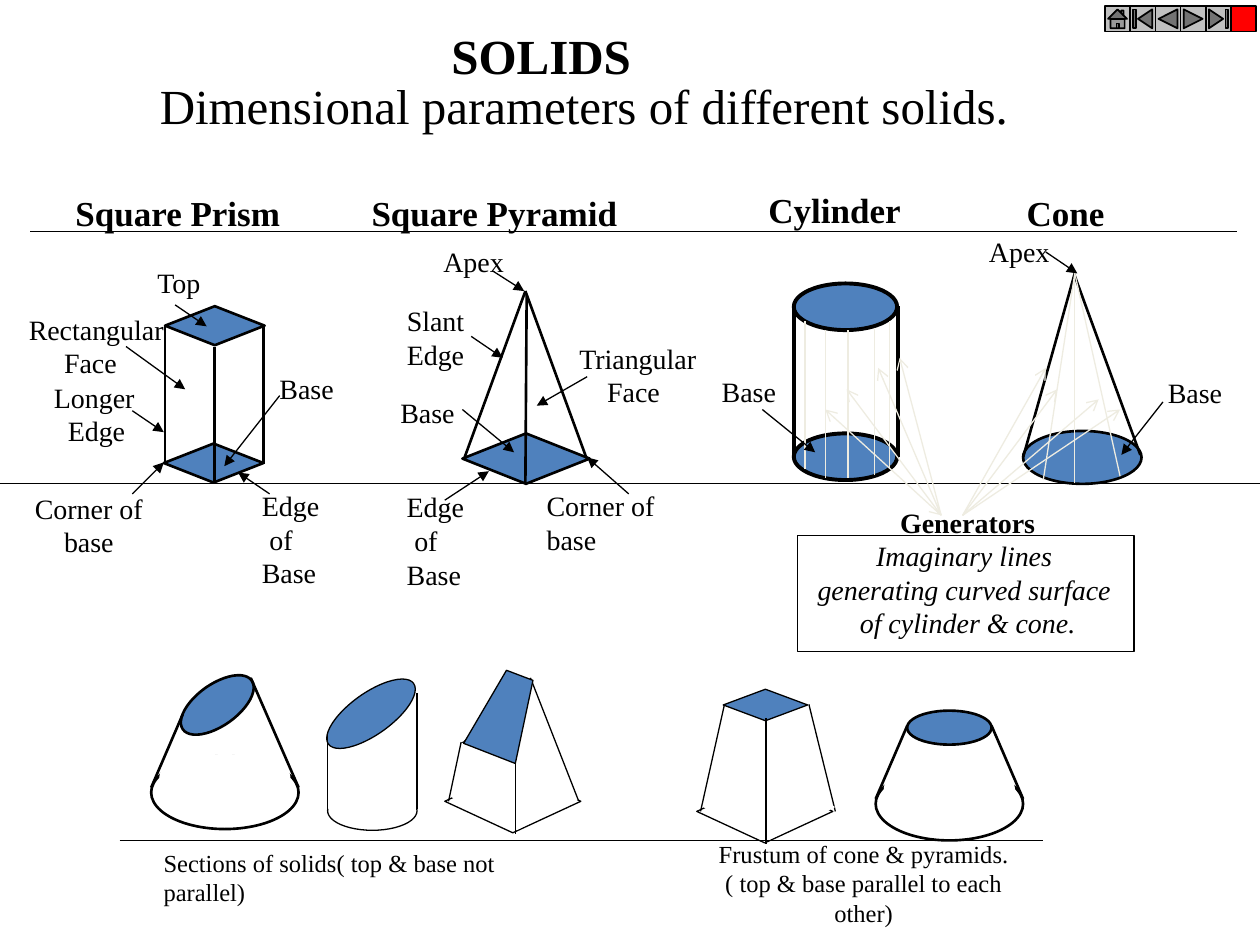
"""Build a slide on the dimensional parameters of solids."""
from dataclasses import dataclass
from typing import Optional

from lxml.etree import SubElement
from pptx import Presentation
from pptx.dml.color import RGBColor
from pptx.enum.shapes import MSO_CONNECTOR, MSO_SHAPE
from pptx.enum.text import MSO_ANCHOR, MSO_AUTO_SIZE, PP_ALIGN
from pptx.oxml.ns import qn
from pptx.util import Inches, Pt

COLORS = {"ink": "000000", "paper": "FFFFFF", "blue": "4F81BD",
          "ivory": "EEECE1", "grey": "C0C0C0", "red": "FF0000"}
FONT = "Times New Roman"
OVAL, DIAMOND, RECT = MSO_SHAPE.OVAL, MSO_SHAPE.DIAMOND, MSO_SHAPE.RECTANGLE


@dataclass
class Face:
    kind: MSO_SHAPE
    left: float
    top: float
    width: float
    height: float
    fill: str = "blue"
    edge: str = "ink"
    weight: float = 0.75
    rotation: float = 0


@dataclass
class Stroke:
    x1: float
    y1: float
    x2: float
    y2: float
    weight: float = 0.75
    color: str = "ink"
    head: Optional[str] = None
    tail: Optional[str] = None


@dataclass
class Polygon:
    points: list
    fill: str = "blue"
    edge: str = "ink"
    weight: float = 0.75


@dataclass
class Label:
    left: float
    top: float
    width: float
    height: float
    lines: list
    size: float = 16
    bold: bool = False
    indent: float = 0
    wrap: bool = False
    align: PP_ALIGN = PP_ALIGN.LEFT


def rgb(name: str) -> RGBColor:
    return RGBColor.from_string(COLORS[name])


def paint(shape, item) -> None:
    shape.shadow.inherit = False
    shape.fill.solid()
    shape.fill.fore_color.rgb = rgb(item.fill)
    shape.line.color.rgb = rgb(item.edge)
    shape.line.width = Pt(item.weight)


def draw_face(shapes, face: Face) -> None:
    shape = shapes.add_shape(face.kind, Inches(face.left), Inches(face.top),
                             Inches(face.width), Inches(face.height))
    shape.rotation = face.rotation
    paint(shape, face)


def draw_stroke(shapes, stroke: Stroke) -> None:
    line = shapes.add_connector(MSO_CONNECTOR.STRAIGHT, Inches(stroke.x1), Inches(stroke.y1),
                                Inches(stroke.x2), Inches(stroke.y2))
    line.line.color.rgb = rgb(stroke.color)
    line.line.width = Pt(stroke.weight)
    properties = line._element.spPr
    for tag, arrow in (("a:headEnd", stroke.head), ("a:tailEnd", stroke.tail)):
        if arrow:
            SubElement(properties.find(qn("a:ln")), qn(tag)).set("type", arrow)
    SubElement(properties, qn("a:effectLst"))


def draw_polygon(shapes, polygon: Polygon) -> None:
    corners = [(Inches(x), Inches(y)) for x, y in polygon.points]
    builder = shapes.build_freeform(*corners[0])
    builder.add_line_segments(corners[1:], close=True)
    paint(builder.convert_to_shape(), polygon)


DRAWERS = {Face: draw_face, Stroke: draw_stroke, Polygon: draw_polygon}


def draw(shapes, items: list) -> None:
    for item in items:
        DRAWERS[type(item)](shapes, item)


def set_font(paragraph, size: float, bold: bool = False, italic: bool = False) -> None:
    font = paragraph.font
    font.name, font.size, font.bold, font.italic = FONT, Pt(size), bold, italic
    font.color.rgb = rgb("ink")


def draw_label(shapes, label: Label):
    box = shapes.add_textbox(Inches(label.left), Inches(label.top),
                             Inches(label.width), Inches(label.height))
    frame = box.text_frame
    frame.word_wrap = label.wrap
    frame.auto_size = MSO_AUTO_SIZE.SHAPE_TO_FIT_TEXT
    for index, line in enumerate(label.lines):
        paragraph = frame.add_paragraph() if index else frame.paragraphs[0]
        paragraph.text = line
        paragraph.alignment = label.align
        set_font(paragraph, label.size, label.bold)
        if index == 1 and label.indent:
            paragraph._p.get_or_add_pPr().set("marL", str(Inches(label.indent)))
    return box


def cone_section(left: float, top: float, cap: Face, rim: list) -> list:
    low = top + 0.25
    return [Face(OVAL, left, top, 1.17, 0.58, "paper", weight=1.5), cap,
            Stroke(*rim[0], left, low, 1.5), Stroke(*rim[1], left + 1.17, low, 1.5),
            Face(OVAL, left + 0.07, top - 0.01, 1.03, 0.35, "paper", "paper")]


def pyramid_section(left: float, top: float, before: list, after: list) -> list:
    return [Face(DIAMOND, left, top, 1.08, 0.5, "paper"), *before,
            Face(DIAMOND, left + 0.06, top - 0.04, 1.03, 0.51, "paper", "paper"), *after]


CYLINDER = [Face(OVAL, 6.3, 2.25, 0.82, 0.37, weight=2.25),
            *[Stroke(x, 2.43, x, 3.63, 2.25) for x in (6.3, 7.13)],
            Face(OVAL, 6.3, 3.44, 0.82, 0.37, weight=2.25)]
CONE = [Face(OVAL, 8.12, 3.42, 0.94, 0.42, weight=1.5),
        Stroke(8.53, 2.17, 8.12, 3.63, 1.5), Stroke(8.53, 2.19, 9.05, 3.61, 1.5)]
PYRAMID = [*[Stroke(4.17, 2.31, x, 3.65, 1.5) for x in (3.68, 4.66)],
           Face(DIAMOND, 3.67, 3.44, 1.01, 0.4, weight=1.5),
           Stroke(4.18, 2.34, 4.17, 3.84, 1.5)]
PRISM = [Face(DIAMOND, 1.31, 2.43, 0.79, 0.31, weight=1.5),
         *[Stroke(x, 2.58, x, 3.68, 1.5) for x in (1.31, 2.09)],
         Face(DIAMOND, 1.3, 3.52, 0.79, 0.31, weight=1.5),
         Stroke(1.7, 3.83, 1.7, 2.75, 1.5)]
GENERATORS = [*[Stroke(x, y, x, y + 1.17, color="ivory") for x, y in
                ((6.39, 2.55), (6.55, 2.62), (6.73, 2.62), (6.94, 2.6), (7.06, 2.55))],
              *[Stroke(8.53, 2.17, x, y, color="ivory") for x, y in
                ((8.28, 3.81), (8.89, 3.78), (8.53, 3.84))]]
CONE_FRUSTUM = cone_section(6.95, 6.09, Face(OVAL, 7.2, 5.64, 0.67, 0.27, weight=1.5),
                            [(7.2, 5.76), (7.87, 5.76)])
CUT_CONE = cone_section(1.2, 6, Face(OVAL, 1.39, 5.43, 0.67, 0.33, weight=1.5, rotation=324.6),
                        [(1.45, 5.67), (1.99, 5.38)])
PYRAMID_FRUSTUM = pyramid_section(
    5.53, 6.19, [Face(DIAMOND, 5.74, 5.47, 0.67, 0.25),
                 Stroke(5.75, 5.59, 5.56, 6.44), Stroke(6.42, 5.59, 6.63, 6.44)],
    [Stroke(6.08, 5.7, 6.08, 6.7)])
CUT_PYRAMID = pyramid_section(
    3.53, 6.11, [Stroke(3.66, 5.89, 3.56, 6.36)],
    [Stroke(4.09, 6.05, 4.09, 6.62), Stroke(3.67, 5.89, 4.09, 6.05),
     Stroke(3.68, 5.89, 4.2, 5.39), Stroke(4.21, 5.38, 4.59, 6.35),
     Polygon([(4.09, 6.06), (4.23, 5.4), (4.02, 5.32), (3.68, 5.9)])])
CUT_CYLINDER = [Face(OVAL, 2.6, 6.28, 0.71, 0.31, "paper"),
                Face(OVAL, 2.53, 5.5, 0.83, 0.33, rotation=324.6),
                Stroke(2.6, 5.83, 2.6, 6.42),
                Face(RECT, 2.61, 6.25, 0.7, 0.17, "paper", "paper"),
                Stroke(3.31, 5.5, 3.31, 6.42)]
BUTTONS = [Face(kind, 8.77 + 0.2 * index, 0.05, 0.2, 0.2, fill, weight=1)
           for index, (kind, fill) in enumerate([
               (MSO_SHAPE.ACTION_BUTTON_HOME, "grey"),
               (MSO_SHAPE.ACTION_BUTTON_BEGINNING, "grey"),
               (MSO_SHAPE.ACTION_BUTTON_BACK_OR_PREVIOUS, "grey"),
               (MSO_SHAPE.ACTION_BUTTON_FORWARD_OR_NEXT, "grey"),
               (MSO_SHAPE.ACTION_BUTTON_END, "grey"),
               (MSO_SHAPE.ACTION_BUTTON_CUSTOM, "red")])]
RULES = [Stroke(0, 3.84, 10, 3.84), Stroke(0.24, 1.84, 9.82, 1.84), Stroke(0.95, 6.67, 8.28, 6.67)]
POINTERS = [Stroke(*ends, tail="triangle") for ends in (
    (1, 2.75, 1.47, 3.09), (1.39, 2.42, 1.64, 2.59), (1.05, 3.26, 1.3, 3.43),
    (3.74, 2.67, 3.99, 2.84), (4.66, 2.99, 4.26, 3.22), (3.91, 2.15, 4.16, 2.31),
    (4.99, 3.92, 4.66, 3.63), (3.53, 3.97, 3.88, 3.74), (3.67, 3.25, 4.08, 3.59),
    (1.05, 3.92, 1.3, 3.67), (2.14, 3.92, 1.89, 3.75), (2.22, 3.14, 1.78, 3.7),
    (6.05, 3.25, 6.47, 3.59), (8.3, 2, 8.55, 2.17), (9.23, 3.19, 8.9, 3.61))]
GENERATOR_POINTERS = [
    Stroke(x, y, 7.47 if x < 7.5 else 7.64, 4.09, color="ivory", head="arrow",
           tail="arrow" if x == 6.55 else None)
    for x, y in ((6.55, 3.25), (6.72, 3.09), (6.97, 2.92), (7.14, 2.84),
                 (8.3, 2.92), (8.39, 3.09), (8.72, 3.17), (8.89, 3.25))]
LABELS = [
    Label(1.17, 0.55, 6.94, 0.57, ["Dimensional parameters of different solids."], 28),
    Label(0.5, 1.47, 1.83, 0.43, ["Square Prism"], 20, True),
    Label(2.85, 1.47, 2.15, 0.43, ["Square Pyramid"], 20, True),
    Label(6, 1.45, 1.25, 0.43, ["Cylinder"], 20, True),
    Label(8.05, 1.47, 1.2, 0.43, ["Cone"], 20, True, wrap=True),
    Label(1.15, 2.06, 0.56, 0.37, ["Top"]),
    Label(0.13, 2.43, 1.28, 0.64, ["Rectangular", "Face"], indent=0.28),
    Label(0.33, 2.97, 0.9, 0.64, ["Longer", "Edge"], indent=0.11),
    Label(4.5, 2.66, 1.14, 0.64, ["Triangular", "Face"], indent=0.22),
    Label(3.13, 2.36, 0.72, 0.64, ["Slant", "Edge"]),
    *[Label(x, y, 0.63, 0.37, ["Base"]) for x, y in
      ((2.12, 2.9), (3.08, 3.09), (5.63, 2.92), (9.17, 2.93))],
    *[Label(x, y, 0.68, 0.37, ["Apex"]) for x, y in ((3.42, 1.89), (7.75, 1.81))],
    *[Label(x, y, 0.66, 0.9, ["Edge", "of", "Base"], indent=0.06) for x, y in
      ((1.98, 3.83), (3.13, 3.84))],
    Label(0.01, 3.85, 1.39, 0.64, ["Corner of base"], wrap=True, align=PP_ALIGN.CENTER),
    Label(4.24, 3.83, 1.39, 0.64, ["Corner of base"], wrap=True),
    Label(1.2, 6.68, 3.4, 0.57, ["Sections of solids( top & base not parallel)"], 14, wrap=True),
    Label(5.45, 6.61, 2.81, 0.8, ["Frustum of cone & pyramids.",
                                  "( top & base parallel to each other)"],
          14, wrap=True, align=PP_ALIGN.CENTER)]


def main() -> None:
    deck = Presentation()
    deck.slide_width, deck.slide_height = Inches(10), Inches(7.5)
    page = deck.slides.add_slide(deck.slide_layouts[5])
    title = page.shapes.title
    title.left, title.top, title.width, title.height = map(Inches, (3.48, 0.15, 1.63, 0.57))
    frame = title.text_frame
    frame.text = "SOLIDS"
    frame.word_wrap, frame.auto_size = False, MSO_AUTO_SIZE.NONE
    frame.vertical_anchor = MSO_ANCHOR.TOP
    set_font(frame.paragraphs[0], 28, True)
    for solid in (CYLINDER, CONE, PYRAMID, PRISM, GENERATORS, CONE_FRUSTUM, CUT_CONE,
                  PYRAMID_FRUSTUM, CUT_PYRAMID, CUT_CYLINDER, BUTTONS):
        draw(page.shapes.add_group_shape().shapes, solid)
    draw(page.shapes, RULES + POINTERS + GENERATOR_POINTERS)
    draw(page.shapes, [Face(RECT, 6.33, 4.25, 2.67, 0.92, "paper")])
    for label in LABELS:
        draw_label(page.shapes, label)
    note = draw_label(page.shapes, Label(
        6.38, 3.96, 2.6, 1.17, ["Generators", "Imaginary lines ", "generating curved surface ",
                                "of cylinder & cone."], align=PP_ALIGN.CENTER))
    for index, paragraph in enumerate(note.text_frame.paragraphs):
        set_font(paragraph, 16, bold=index == 0, italic=index > 0)
    deck.save("out.pptx")


if __name__ == "__main__":
    main()
